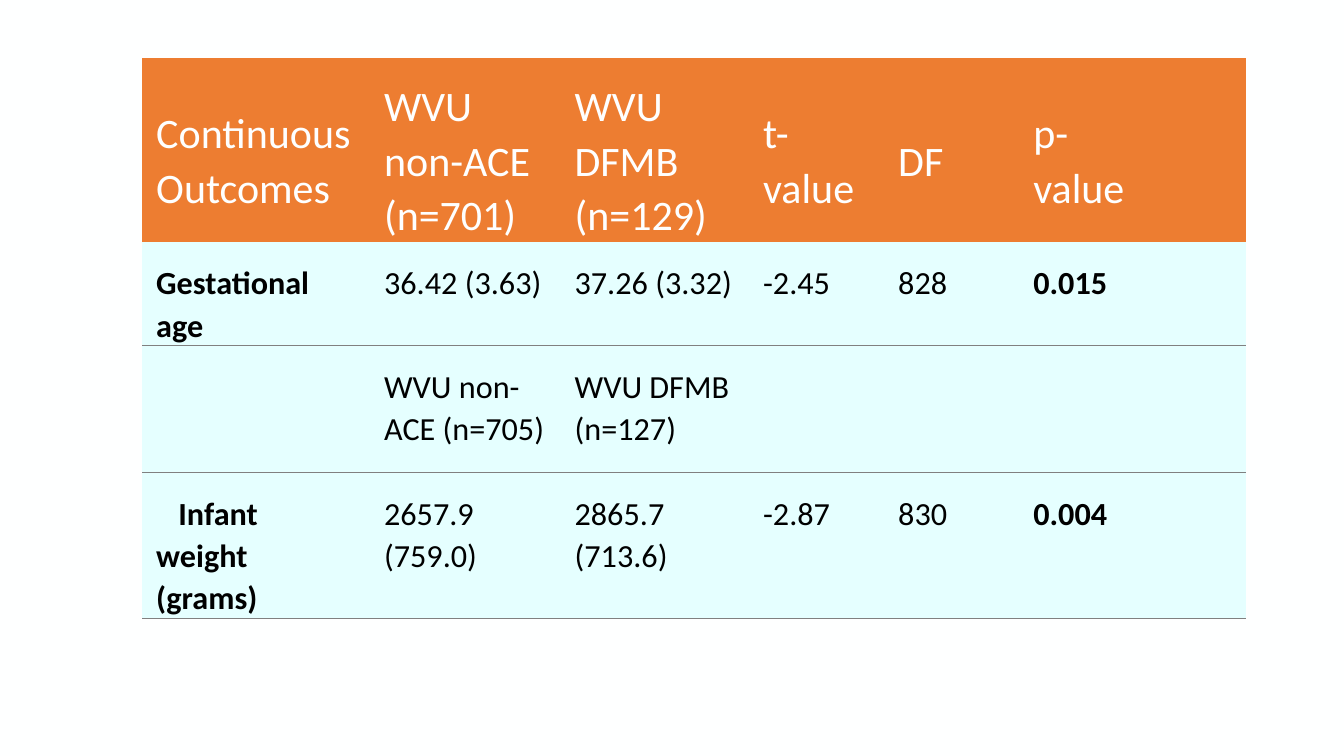
from lxml import etree
from pptx import Presentation
from pptx.dml.color import RGBColor
from pptx.enum.text import MSO_ANCHOR
from pptx.oxml.ns import qn
from pptx.util import Inches, Pt

MIDDLE, TOP = MSO_ANCHOR.MIDDLE, MSO_ANCHOR.TOP
COLORS = {"page": "FEFFFF", "header": "ED7D31", "body": "E5FFFF",
          "text": "000000", "rule": "808080"}
NO_STYLE = "{2D5ABB26-0587-4C30-8999-92F81FD0307C}"
COL_WIDTHS = [2.26, 1.89, 1.87, 1.34, 1.34, 1.34, 0.91]
ROW_HEIGHTS = [1.6, 0.91, 1.26, 1.26]
MARGINS = {"margin_left": 0.14, "margin_top": 0.19,
           "margin_right": 0.14, "margin_bottom": 0}
BOLD_COLS = (0, 5)
INFANT_ROW = 3
OUTCOMES = [
    ["Continuous Outcomes", "WVU non-ACE (n=701)", "WVU DFMB (n=129)",
     "t-value", "DF", "p-value", ""],
    ["Gestational age", "36.42 (3.63)", "37.26 (3.32)", "-2.45", "828", "0.015", ""],
    ["", "WVU non-ACE (n=705)", "WVU DFMB (n=127)", "", "", "", ""],
    ["Infant weight (grams)", "2657.9 (759.0)", "2865.7 (713.6)",
     "-2.87", "830", "0.004", ""],
]


def rgb(name):
    return RGBColor.from_string(COLORS[name])


def add_bottom_rule(cell):
    ln = etree.Element(qn("a:lnB"), w=str(Pt(0.75)))
    fill = etree.SubElement(ln, qn("a:solidFill"))
    etree.SubElement(fill, qn("a:srgbClr"), val=COLORS["rule"])
    cell._tc.get_or_add_tcPr().insert(0, ln)


def fill_cell(cell, text, header, bold):
    for name, value in MARGINS.items():
        setattr(cell, name, Inches(value))
    cell.vertical_anchor = MIDDLE if header else TOP
    cell.fill.solid()
    cell.fill.fore_color.rgb = rgb("header" if header else "body")
    if not header:
        add_bottom_rule(cell)
    if text:
        p = cell.text_frame.paragraphs[0]
        p.line_spacing = 1.07
        r = p.add_run()
        r.text = text
        font = {"name": "Calibri", "size": Pt(30 if header else 23), "bold": bold}
        for name, value in font.items():
            setattr(r.font, name, value)
        r.font.color.rgb = rgb("page" if header else "text")


def add_outcomes_table(s, left, top):
    frame = s.shapes.add_table(
        len(ROW_HEIGHTS), len(COL_WIDTHS), Inches(left), Inches(top),
        Inches(sum(COL_WIDTHS)), Inches(sum(ROW_HEIGHTS)))
    table = frame.table
    table._tbl.tblPr.find(qn("a:tableStyleId")).text = NO_STYLE
    table.horz_banding = False
    for col, width in zip(table.columns, COL_WIDTHS):
        col.width = Inches(width)
    for row, height in zip(table.rows, ROW_HEIGHTS):
        row.height = Inches(height)
    for i, texts in enumerate(OUTCOMES):
        for j, text in enumerate(texts):
            header = i == 0
            fill_cell(table.cell(i, j), text, header, not header and j in BOLD_COLS)
    infant = table.cell(INFANT_ROW, 0).text_frame.paragraphs[0]
    infant._p.get_or_add_pPr().set("indent", str(Inches(0.22)))


def main():
    prs = Presentation()
    prs.slide_width, prs.slide_height = Inches(13.33), Inches(7.5)
    s = prs.slides.add_slide(prs.slide_layouts[6])
    s.background.fill.solid()
    s.background.fill.fore_color.rgb = rgb("page")
    add_outcomes_table(s, 1.41, 0.58)
    prs.save("out.pptx")


if __name__ == "__main__":
    main()
